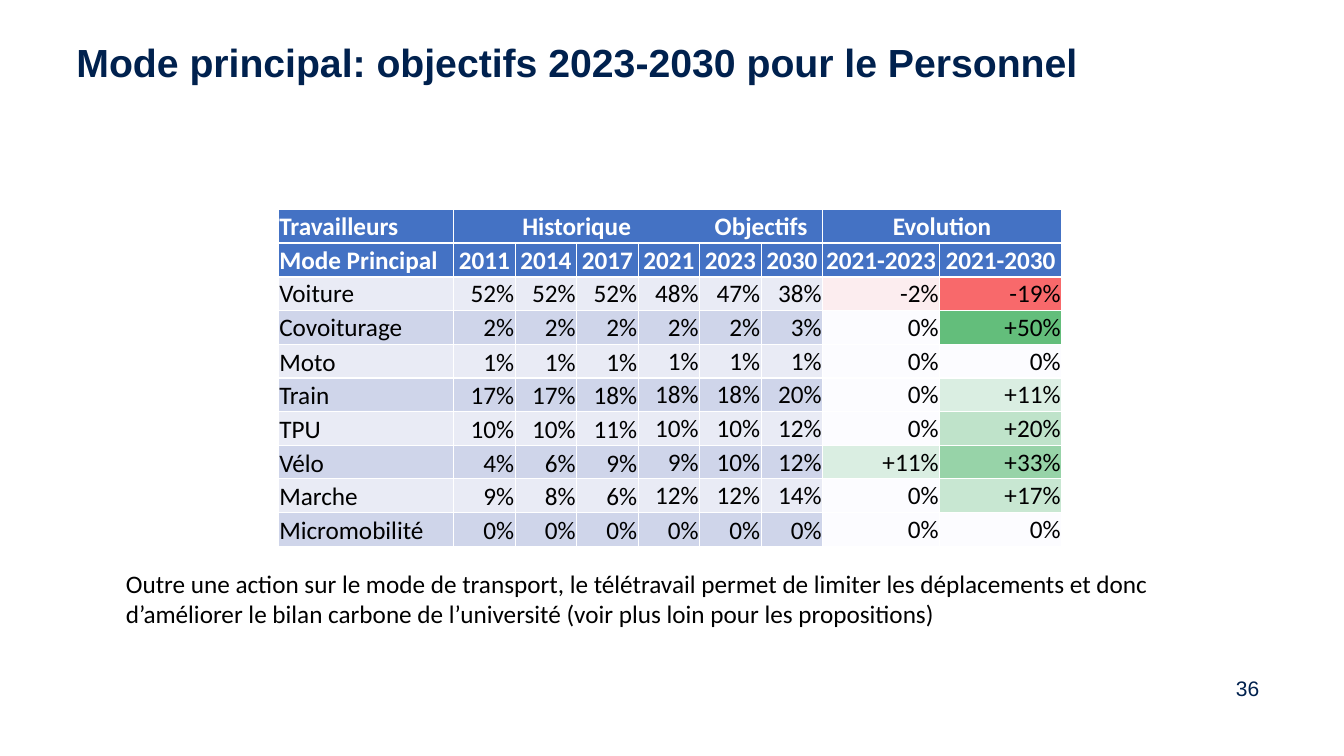
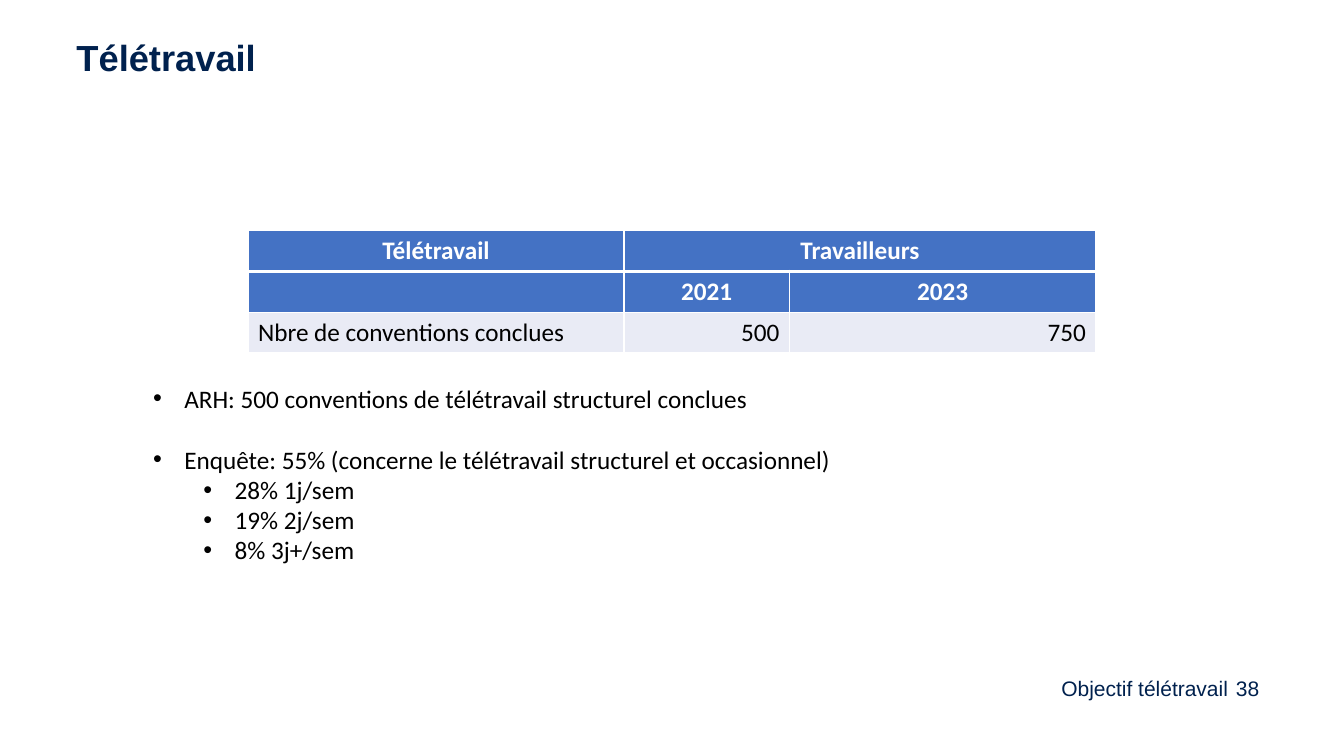
"""Build two slides on commuting targets and teleworking."""
import pptx
import pptx.dml.color
import pptx.enum.text
import pptx.oxml
import pptx.oxml.ns
import pptx.util
from pptx.util import Inches

ALIGN = pptx.enum.text.PP_ALIGN
ANCHOR = pptx.enum.text.MSO_ANCHOR


class Deck:
    COLORS = {
        "navy": "00214E", "black": "000000", "white": "FFFFFF",
        "header": "4472C4", "odd": "E9EBF5", "even": "CFD5EA",
        "low": "F8696B", "zero": "FCFCFF", "high": "63BE7B",
    }
    HEAD_FONT = "Arial"
    BODY_FONT = "Calibri"

    def __init__(self):
        self.prs = pptx.Presentation()
        self.prs.slide_width = Inches(13.33)
        self.prs.slide_height = Inches(7.5)
        self.s = None

    def rgb(self, color):
        return pptx.dml.color.RGBColor.from_string(self.COLORS.get(color, color))

    def style(self, p, size, font, color, bold=False):
        for r in p.runs:
            r.font.size = pptx.util.Pt(size)
            r.font.name = font
            r.font.bold = bold
            r.font.color.rgb = self.rgb(color)

    def text_frame(self, box):
        tf = self.s.shapes.add_textbox(*map(Inches, box)).text_frame
        tf.word_wrap = True
        return tf

    def heading_text(self, box, text, size, bold=False, spacing=0.9, align=ALIGN.LEFT):
        tf = self.text_frame(box)
        tf.text = text
        p = tf.paragraphs[0]
        p.alignment = align
        p.line_spacing = spacing
        self.style(p, size, self.HEAD_FONT, "navy", bold)

    def slide(self, title, number, size=28, spacing=0.9, footer=None):
        self.s = self.prs.slides.add_slide(self.prs.slide_layouts[6])
        self.heading_text((0.66, 0.38, 11.62, 0.47), title, size, True, spacing)
        self.heading_text((12.16, 6.68, 0.59, 0.47), number, 15)
        if footer:
            self.heading_text((7.63, 6.68, 4.65, 0.47), footer, 15, align=ALIGN.RIGHT)

    def body(self, box, text):
        tf = self.text_frame(box)
        tf.text = text
        self.style(tf.paragraphs[0], 18, self.BODY_FONT, "black")

    def bullets(self, box, items):
        tf = self.text_frame(box)
        for i, (level, text, after) in enumerate(items):
            p = tf.paragraphs[0] if i == 0 else tf.add_paragraph()
            p.text = text
            p.level = level
            pPr = p._p.get_or_add_pPr()
            pPr.set("marL", str(Inches(0.31 + 0.5 * level)))
            pPr.set("indent", str(Inches(-0.31)))
            for tag, key, value in (("buFont", "typeface", "Arial"), ("buChar", "char", "•")):
                el = pptx.oxml.parse_xml(f"<a:{tag} {pptx.oxml.ns.nsdecls('a')}/>")
                el.set(key, value)
                pPr.append(el)
            p.space_after = pptx.util.Pt(after)
            self.style(p, 18, self.BODY_FONT, "black")

    def border(self, cell, side, width):
        fill = (f'<a:solidFill><a:srgbClr val="{self.COLORS["white"]}"/></a:solidFill>'
                if width else "<a:noFill/>")
        cell._tc.get_or_add_tcPr().append(pptx.oxml.parse_xml(
            f'<a:ln{side} {pptx.oxml.ns.nsdecls("a")} w="{pptx.util.Pt(width)}">'
            f"{fill}</a:ln{side}>"))

    def scale_color(self, value, low, high):
        end, limit = ("low", low) if value < 0 else ("high", high)
        pairs = zip(self.rgb("zero"), self.rgb(end))
        return "".join(f"{round(a + (b - a) * value / limit):02X}" for a, b in pairs)

    def table(self, box, widths, rows, rule, first_header=ALIGN.CENTER, inset=None,
              scale_from=None, open_edges=(), is_low=lambda r, c: False):
        table = self.s.shapes.add_table(len(rows), len(widths), *map(Inches, box)).table
        for col, width in zip(table.columns, widths):
            col.width = Inches(width)
        if scale_from:
            scaled = [int(v.rstrip("%")) for row in rows[2:] for v in row[scale_from:]]
        for r, row in enumerate(rows):
            header = r < 2
            for c, text in enumerate(row):
                cell = table.cell(r, c)
                edges = {"L": 1, "R": 1, "T": rule if r == 1 else 1,
                         "B": rule if r == 0 else 1}
                for side, width in edges.items():
                    self.border(cell, side, 0 if (r, c, side) in open_edges else width)
                if header:
                    color = "header"
                elif scale_from and c >= scale_from:
                    color = self.scale_color(int(text.rstrip("%")), min(scaled), max(scaled))
                else:
                    color = "even" if r % 2 else "odd"
                cell.fill.solid()
                cell.fill.fore_color.rgb = self.rgb(color)
                if inset is not None:
                    cell.margin_left = cell.margin_right = cell.margin_top = Inches(inset)
                    cell.margin_bottom = 0
                    cell.vertical_anchor = ANCHOR.BOTTOM if is_low(r, c) else ANCHOR.MIDDLE
                if text is None:
                    continue
                cell.text_frame.text = text
                p = cell.text_frame.paragraphs[0]
                if header:
                    p.alignment = ALIGN.CENTER if c else first_header
                else:
                    p.alignment = ALIGN.RIGHT if c else ALIGN.LEFT
                self.style(p, 18, self.BODY_FONT, "white" if header else "black", header)
            for c, text in enumerate(row):
                end = c
                while end + 1 < len(row) and row[end + 1] is None:
                    end += 1
                if text is not None and end > c:
                    table.cell(r, c).merge(table.cell(r, end))


def main():
    deck = Deck()
    deck.slide("Mode principal: objectifs 2023-2030 pour le Personnel", "36")
    modes = [
        ["Travailleurs", "Historique", None, None, None, "Objectifs", None, "Evolution", None],
        ["Mode Principal", "2011", "2014", "2017", "2021", "2023", "2030",
         "2021-2023", "2021-2030"],
        ["Voiture", "52%", "52%", "52%", "48%", "47%", "38%", "-2%", "-19%"],
        ["Covoiturage", "2%", "2%", "2%", "2%", "2%", "3%", "0%", "+50%"],
        ["Moto", "1%", "1%", "1%", "1%", "1%", "1%", "0%", "0%"],
        ["Train", "17%", "17%", "18%", "18%", "18%", "20%", "0%", "+11%"],
        ["TPU", "10%", "10%", "11%", "10%", "10%", "12%", "0%", "+20%"],
        ["Vélo", "4%", "6%", "9%", "9%", "10%", "12%", "+11%", "+33%"],
        ["Marche", "9%", "8%", "6%", "12%", "12%", "14%", "0%", "+17%"],
        ["Micromobilité", "0%", "0%", "0%", "0%", "0%", "0%", "0%", "0%"],
    ]
    deck.table((2.76, 2.08, 7.78, 3.34), [1.74] + [0.61] * 6 + [1.16, 1.21], modes,
               rule=1.5, first_header=ALIGN.LEFT, inset=0.01, scale_from=7,
               open_edges={(0, 1, "R"), (0, 4, "R"), (0, 5, "L")},
               is_low=lambda r, c: r >= 4 and c < (7 if r == 9 else 4))
    deck.body((1.15, 5.59, 11.12, 0.71),
              "Outre une action sur le mode de transport, le télétravail permet de limiter "
              "les déplacements et donc d’améliorer le bilan carbone de l’université "
              "(voir plus loin pour les propositions)")

    deck.slide("Télétravail", "38", size=25.9, spacing=0.8, footer="Objectif télétravail")
    agreements = [
        ["Télétravail", "Travailleurs", None],
        ["", "2021", "2023"],
        ["Nbre de conventions conclues", "500", "750"],
    ]
    deck.table((2.46, 2.29, 8.41, 1.21), [3.73, 1.64, 3.04], agreements, rule=3)
    deck.bullets((0.92, 3.75, 10.26, 2.22), [
        (1, "ARH: 500 conventions de télétravail structurel conclues", 22),
        (1, "Enquête: 55% (concerne le télétravail structurel et occasionnel)", 0),
        (2, "28% 1j/sem", 0),
        (2, "19% 2j/sem", 0),
        (2, "8% 3j+/sem", 0),
    ])
    deck.prs.save("out.pptx")


if __name__ == "__main__":
    main()
